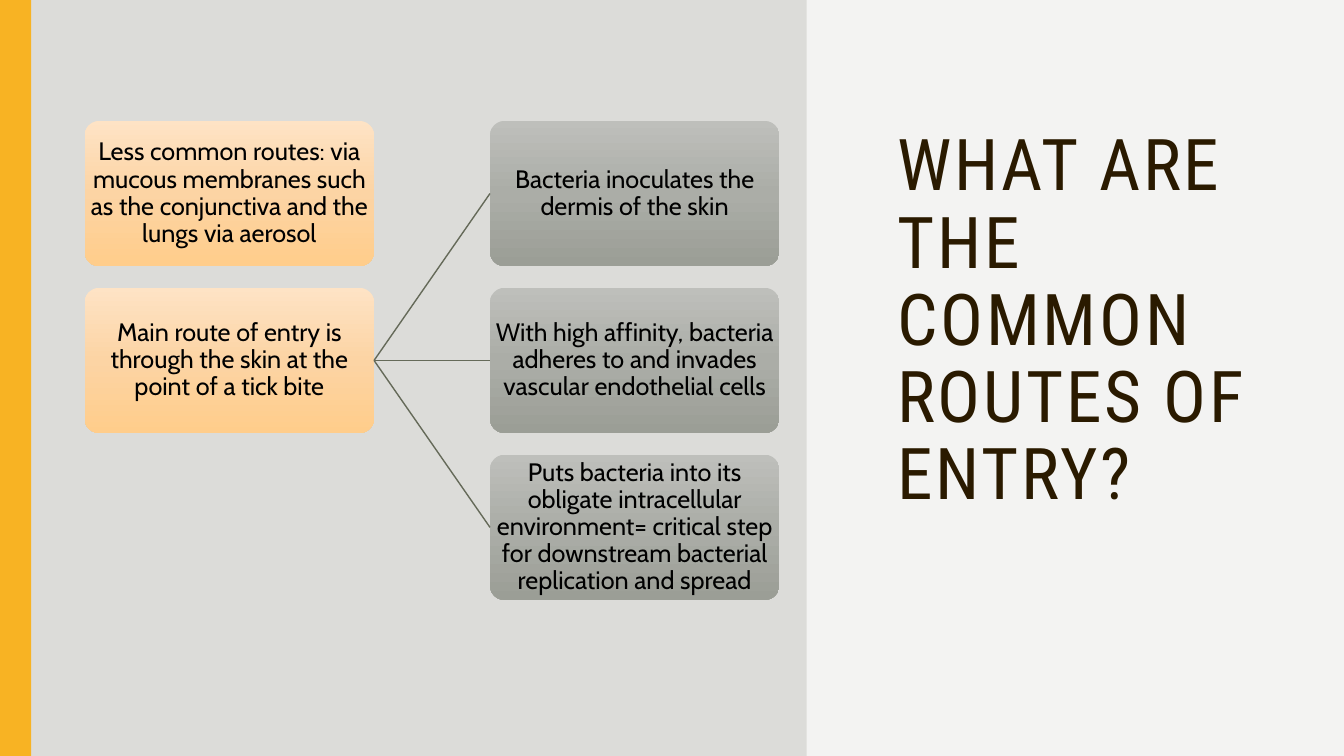
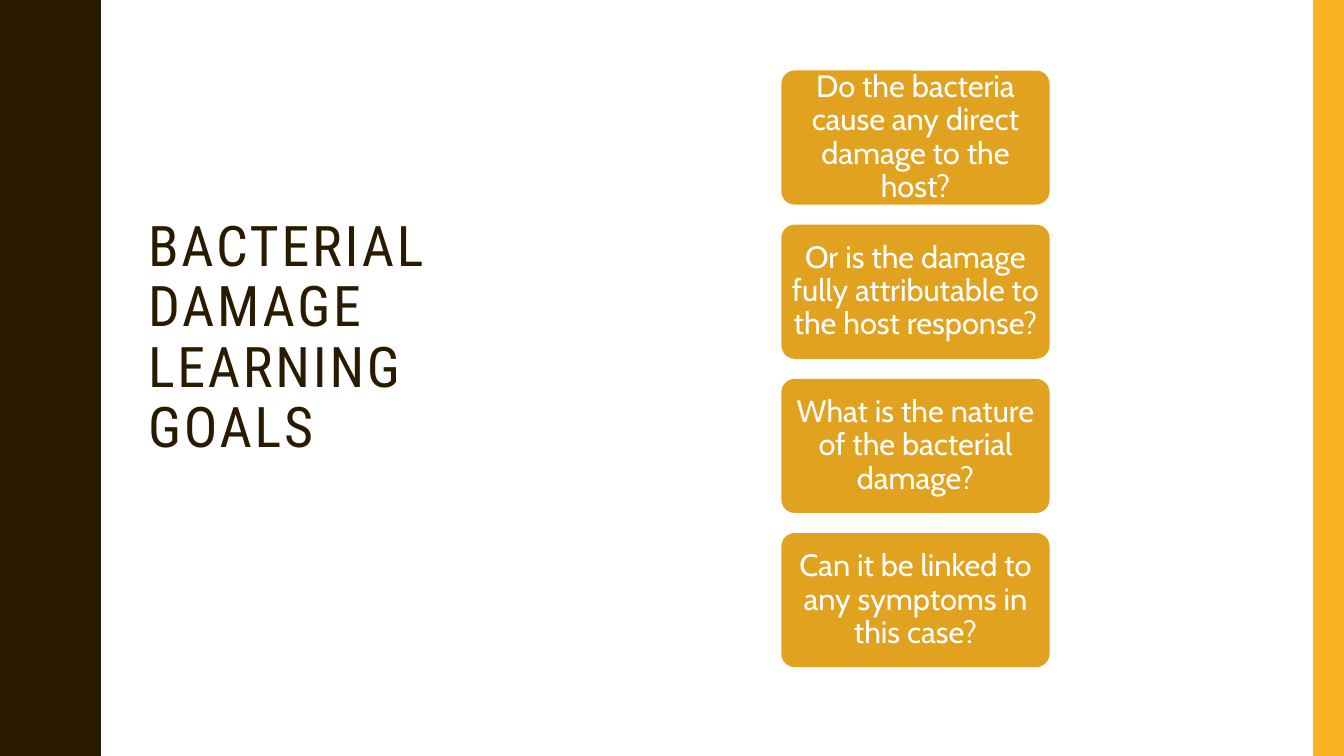
from copy import deepcopy
from dataclasses import dataclass

from pptx import Presentation
from pptx.dml.color import RGBColor
from pptx.enum.shapes import MSO_CONNECTOR, MSO_SHAPE
from pptx.enum.text import MSO_ANCHOR, PP_ALIGN
from pptx.oxml.ns import qn
from pptx.oxml.xmlchemy import OxmlElement
from pptx.shapes.autoshape import Shape
from pptx.slide import Slide
from pptx.util import Inches, Pt

WIDE, HIGH, BAND = 13.33, 7.5, 0.31
HEX = {
    "white": "FFFFFF",
    "black": "000000",
    "pale": "F3F3F2",
    "stone": "DCDCD9",
    "brown": "2A1A00",
    "amber": "F8B323",
    "gold": "E1A220",
    "line": "656A59",
}
FADES = {
    "peach": ("FEE3C5", "FCD4A4", "FFCD8B"),
    "grey": ("BEBFBB", "ABADA7", "9B9E96"),
}
CREST = [
    (0, 0), (0, 0.07), (0.01, 0.14), (0.02, 0.2), (0.03, 0.25),
    (0.05, 0.29), (0.07, 0.33), (0.09, 0.38), (0.11, 0.42), (0.13, 0.46),
    (0.15, 0.5), (0.17, 0.55), (0.18, 0.61), (0.19, 0.68), (0.19, 0.75),
]
CYCLE = 1.5


@dataclass
class Frame:
    back: str
    wave: str
    edge: float
    band: float


@dataclass
class Title:
    text: str
    left: float
    top: float
    width: float
    height: float
    size: float


@dataclass
class Stack:
    left: float
    top: float
    width: float
    height: float
    size: float
    inset: float
    ink: str
    fill: str
    texts: list[str]


def tint(name: str) -> RGBColor:
    return RGBColor.from_string(HEX[name])


def apply(item: object, look: dict) -> None:
    for key, value in look.items():
        setattr(item, key, value)


def write(shape: Shape, text: str, font: str, size: float, ink: str,
          align: PP_ALIGN, inset: float) -> None:
    frame = shape.text_frame
    apply(frame, {"word_wrap": True, "vertical_anchor": MSO_ANCHOR.MIDDLE})
    apply(frame, {f"margin_{side}": Inches(inset)
                  for side in ("left", "right", "top", "bottom")})
    para = frame.paragraphs[0]
    apply(para, {"line_spacing": 0.9, "alignment": align})
    run = para.add_run()
    run.text = text
    apply(run.font, {"name": font, "size": Pt(size)})
    run.font.color.rgb = tint(ink)


def paint(shape: Shape, fill: str) -> None:
    shape.shadow.inherit = False
    shape.line.fill.background()
    if fill not in FADES:
        shape.fill.solid()
        shape.fill.fore_color.rgb = tint(fill)
        return
    shape.fill.gradient()
    shape.fill.gradient_angle = 270
    stops = shape._element.spPr.find(".//" + qn("a:gsLst"))
    stops.insert(1, deepcopy(stops[0]))
    for spot, (stop, code) in enumerate(zip(shape.fill.gradient_stops, FADES[fill])):
        stop.position = spot / 2
        stop.color.rgb = RGBColor.from_string(code)


def draw_frame(slide: Slide, frame: Frame) -> None:
    slide.background.fill.solid()
    slide.background.fill.fore_color.rgb = tint(frame.back)
    swell = CREST + [(x, CYCLE - y) for x, y in CREST[-2::-1]]
    points = [(frame.edge + x, turn * CYCLE + y)
              for turn in range(round(HIGH / CYCLE)) for x, y in swell]
    path = slide.shapes.build_freeform(0, 0, scale=Inches(1))
    path.add_line_segments(points + [(0, HIGH)], close=True)
    paint(path.convert_to_shape(), frame.wave)
    band = slide.shapes.add_shape(
        MSO_SHAPE.RECTANGLE, Inches(frame.band), 0, Inches(BAND), Inches(HIGH))
    paint(band, "amber")


def draw_title(slide: Slide, title: Title) -> None:
    box = slide.shapes.add_textbox(*map(
        Inches, (title.left, title.top, title.width, title.height)))
    write(box, title.text, "Roboto Condensed", title.size, "brown", PP_ALIGN.LEFT, 0.1)
    box.text_frame.paragraphs[0].runs[0].font._element.set("spc", "200")


def draw_stack(slide: Slide, stack: Stack) -> list[Shape]:
    boxes = []
    for row, text in enumerate(stack.texts):
        top = stack.top + row * stack.height * 1.15
        box = slide.shapes.add_shape(MSO_SHAPE.ROUNDED_RECTANGLE, *map(
            Inches, (stack.left, top, stack.width, stack.height)))
        box.adjustments[0] = 0.1
        paint(box, stack.fill)
        write(box, text, "Cabin", stack.size, stack.ink, PP_ALIGN.CENTER, stack.inset)
        boxes.append(box)
    return boxes


def link(slide: Slide, start: Shape, end: Shape) -> None:
    line = slide.shapes.add_connector(MSO_CONNECTOR.STRAIGHT, 0, 0, 0, 0)
    line.begin_connect(start, 3)
    line.end_connect(end, 1)
    line.line.width = Pt(1)
    line.line.color.rgb = tint("line")
    line._element.spPr.append(OxmlElement("a:effectLst"))


ENTRY = Title("WHAT ARE THE COMMON ROUTES OF ENTRY?", 8.8, 0.53, 4, 5.33, 51)
GOALS = Title("BACTERIAL DAMAGE LEARNING GOALS", 1.37, 0.7, 3.7, 5.32, 40)
ROUTES = Stack(0.84, 1.2, 2.87, 1.44, 18, 0.01, "black", "peach", [
    "Less common routes: via mucous membranes such as the conjunctiva "
    "and the lungs via aerosol",
    "Main route of entry is through the skin at the point of a tick bite",
])
STEPS = Stack(4.86, 1.2, 2.87, 1.44, 18, 0.01, "black", "grey", [
    "Bacteria inoculates the dermis of the skin",
    "With high affinity, bacteria adheres to and invades vascular endothelial cells",
    "Puts bacteria into its obligate intracellular environment= critical step "
    "for downstream bacterial replication and spread",
])
ASKS = Stack(7.75, 0.7, 2.66, 1.33, 22, 0.02, "white", "gold", [
    "Do the bacteria cause any direct damage to the host?",
    "Or is the damage fully attributable to the host response?",
    "What is the nature of the bacterial damage?",
    "Can it be linked to any symptoms in this case?",
])


def main() -> None:
    deck = Presentation()
    apply(deck, {"slide_width": Inches(WIDE), "slide_height": Inches(HIGH)})
    blank = deck.slide_layouts[6]

    slide = deck.slides.add_slide(blank)
    draw_frame(slide, Frame("pale", "stone", 8.08, 0))
    draw_title(slide, ENTRY)
    routes = draw_stack(slide, ROUTES)
    for step in draw_stack(slide, STEPS):
        link(slide, routes[-1], step)

    slide = deck.slides.add_slide(blank)
    draw_frame(slide, Frame("white", "brown", 0.78, WIDE - BAND))
    draw_title(slide, GOALS)
    draw_stack(slide, ASKS)

    deck.save("out.pptx")


if __name__ == "__main__":
    main()
